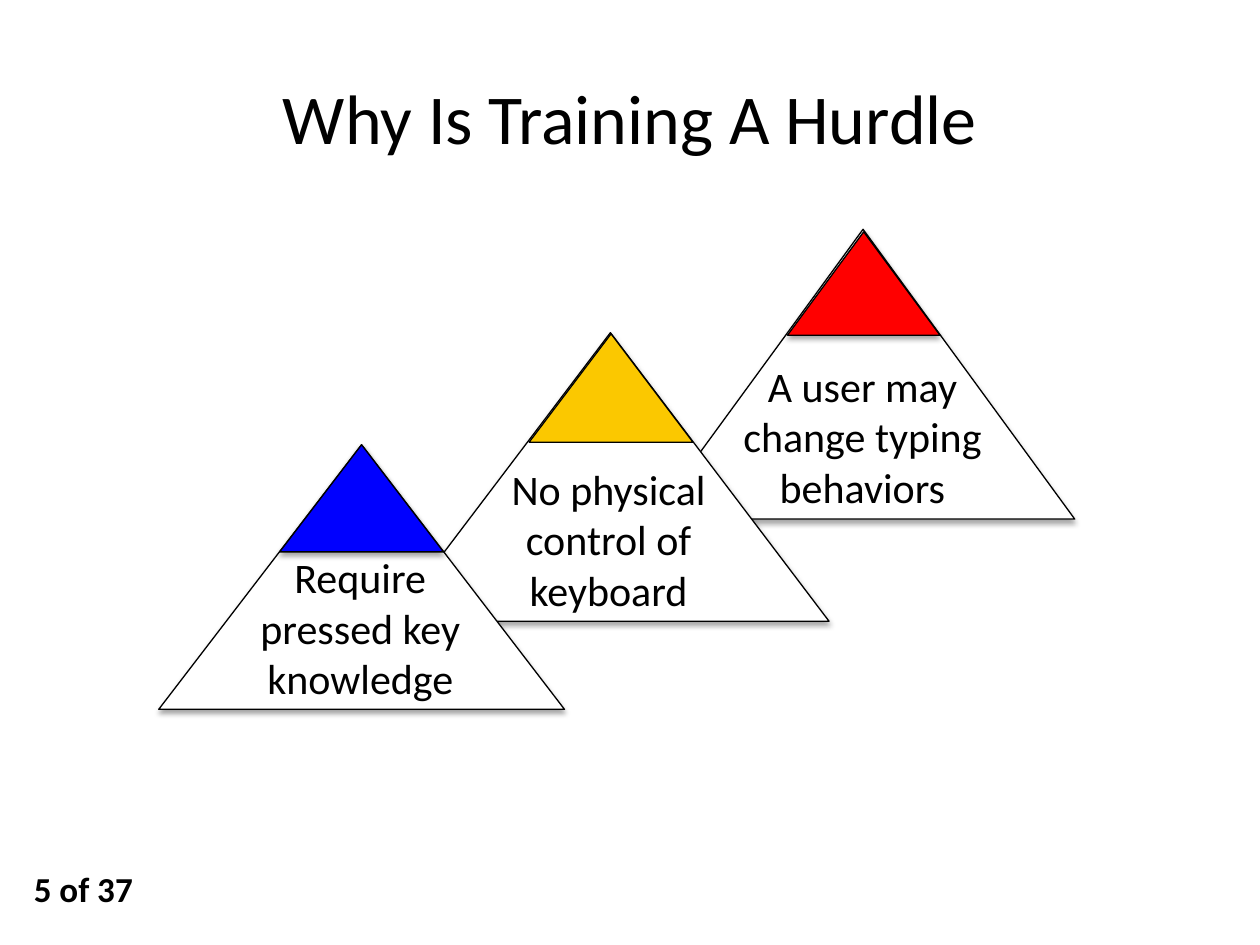
from dataclasses import dataclass

import lxml.etree
import pptx
import pptx.dml.color
import pptx.enum.shapes
import pptx.enum.text
import pptx.oxml
import pptx.oxml.ns
import pptx.util

Inches = pptx.util.Inches
RGBColor = pptx.dml.color.RGBColor
Align = pptx.enum.text.PP_ALIGN
Anchor = pptx.enum.text.MSO_ANCHOR

BLACK = RGBColor(0x00, 0x00, 0x00)
WHITE = RGBColor(0xFF, 0xFF, 0xFF)
RED = RGBColor(0xFF, 0x00, 0x00)
AMBER = RGBColor(0xFB, 0xC8, 0x00)
BLUE = RGBColor(0x00, 0x00, 0xFF)

SHADOW_XML = (
    f'<a:effectLst {pptx.oxml.ns.nsdecls("a")}>'
    '<a:outerShdw blurRad="39370" dist="22860" dir="5400000" rotWithShape="0">'
    '<a:srgbClr val="000000"><a:alpha val="35000"/></a:srgbClr>'
    '</a:outerShdw></a:effectLst>'
)


@dataclass(frozen=True)
class Box:
    left: float
    top: float
    width: float
    height: float

    def lengths(self) -> list[int]:
        return [Inches(v) for v in (self.left, self.top, self.width, self.height)]


@dataclass(frozen=True)
class Hurdle:
    reason: str
    color: RGBColor
    body: Box
    tip: Box
    label: Box
    tip_shadow: bool = True


# Back to front: each pyramid overlaps the one before it
HURDLES = [
    Hurdle("A user may change typing behaviors", RED,
           Box(5.17, 1.82, 3.36, 2.3), Box(6.25, 1.84, 1.21, 0.82),
           Box(5.75, 2.81, 2.19, 1.14)),
    Hurdle("No physical control of keyboard", AMBER,
           Box(3.11, 2.64, 3.47, 2.29), Box(4.2, 2.65, 1.3, 0.86),
           Box(3.62, 3.63, 2.42, 1.25), tip_shadow=False),
    Hurdle("Require pressed key knowledge", BLUE,
           Box(1.26, 3.53, 3.22, 2.1), Box(2.22, 3.53, 1.3, 0.85),
           Box(1.78, 4.33, 2.16, 1.26)),
]


def add_triangle(slide, box: Box, color: RGBColor, shadow: bool = True) -> None:
    triangle = slide.shapes.add_shape(
        pptx.enum.shapes.MSO_SHAPE.ISOSCELES_TRIANGLE, *box.lengths())
    triangle.fill.solid()
    triangle.fill.fore_color.rgb = color
    triangle.line.color.rgb = BLACK
    triangle.line.width = pptx.util.Pt(0.75)
    triangle.shadow.inherit = False
    if shadow:
        properties = triangle.element.spPr
        properties.replace(properties.find(pptx.oxml.ns.qn("a:effectLst")),
                           lxml.etree.fromstring(SHADOW_XML))


def add_text(slide, box: Box, text: str, size: float, bold: bool = False,
             align: Align = Align.CENTER, anchor: Anchor = Anchor.MIDDLE) -> None:
    frame = slide.shapes.add_textbox(*box.lengths()).text_frame
    frame.word_wrap = True
    frame.vertical_anchor = anchor
    paragraph = frame.paragraphs[0]
    paragraph.alignment = align
    run = paragraph.add_run()
    run.text = text
    font_format = {"name": "Calibri", "size": pptx.util.Pt(size), "bold": bold}
    for attribute, value in font_format.items():
        setattr(run.font, attribute, value)
    run.font.color.rgb = BLACK


def add_hurdle(slide, hurdle: Hurdle) -> None:
    add_triangle(slide, hurdle.body, WHITE)
    add_triangle(slide, hurdle.tip, hurdle.color, hurdle.tip_shadow)
    add_text(slide, hurdle.label, hurdle.reason, 24, anchor=Anchor.TOP)


def main() -> None:
    deck = pptx.Presentation()
    deck.slide_width, deck.slide_height = Inches(10), Inches(7.5)
    slide = deck.slides.add_slide(deck.slide_layouts[6])

    # Title
    add_text(slide, Box(0.5, 0.3, 9, 1.25), "Why Is Training A Hurdle", 40)

    # Rising row of pyramids
    for hurdle in HURDLES:
        add_hurdle(slide, hurdle)

    # Page count
    add_text(slide, Box(0.17, 6.85, 2.33, 0.4), "5 of 37", 20, bold=True,
             align=Align.LEFT)

    deck.save("out.pptx")


if __name__ == "__main__":
    main()
